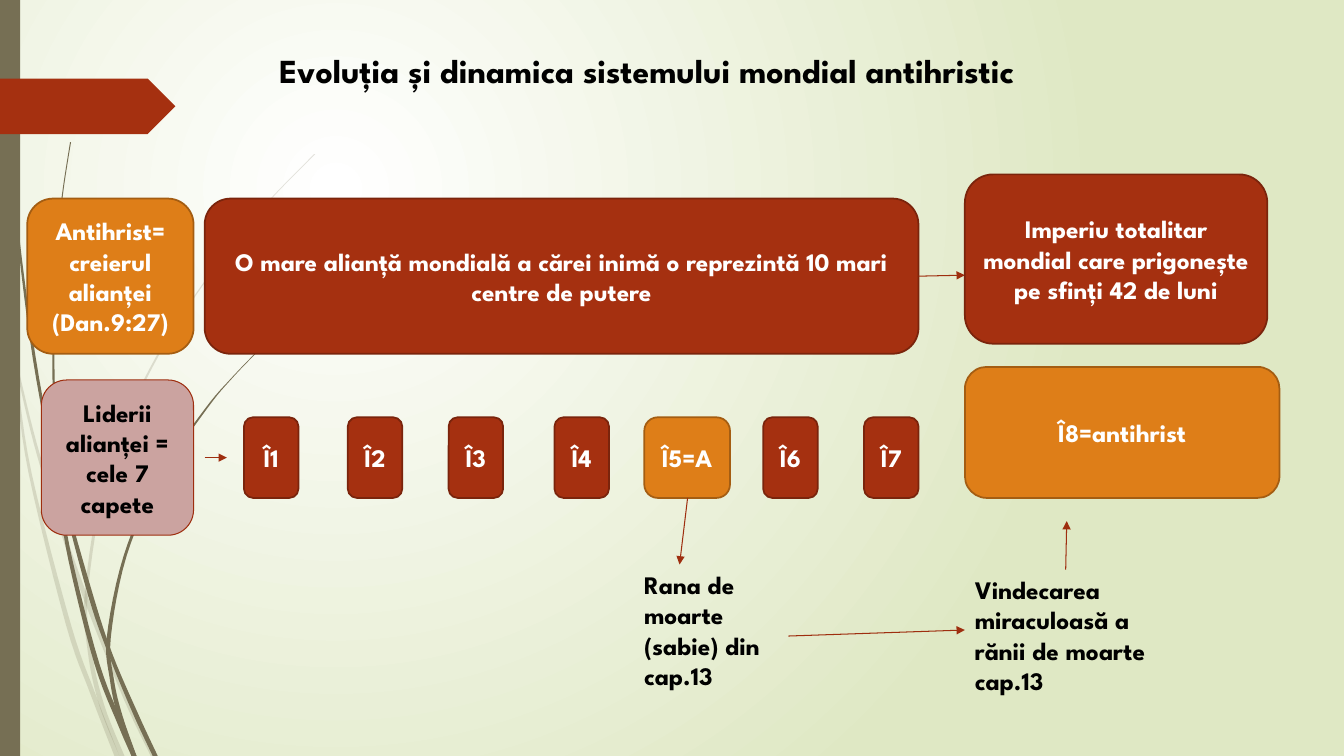
from lxml import etree
from pptx import Presentation
from pptx.dml.color import RGBColor
from pptx.enum.shapes import MSO_CONNECTOR, MSO_SHAPE
from pptx.enum.text import MSO_ANCHOR, MSO_AUTO_SIZE, PP_ALIGN
from pptx.oxml.ns import qn
from pptx.util import Inches, Pt

FONT = "League Spartan"
COLORS = {
    "white": "FFFFFF", "black": "000000", "pale": "DFE8C4", "olive": "766F54",
    "red": "A53010", "red_edge": "7A240C", "orange": "DE7E18",
    "orange_edge": "A45D12", "pink": "CBA3A0", "arrow": "9E2E0F",
}
RED = ("red", "red_edge", 1.25, "white")
ORANGE = ("orange", "orange_edge", 1.25, "white")
PINK = ("pink", "arrow", 0.75, "black")

LIGHT_STEMS = [
    [(0, 2.9, 0.02), (0.05, 3.2, 0.07), (0.11, 3.5, 0.01), (0.16, 3.76, 0.02),
     (0.3, 4.7, 0.03), (0.68, 6.2, 0.05), (0.92, 6.88, 0.05), (1.16, 7.5, 0.05)],
    [(0.14, 3.45, 0.01), (0.16, 3.6, 0.02), (0.35, 4.4, 0.03), (0.6, 5.21, 0.04),
     (0.85, 5.93, 0.05), (1.25, 6.93, 0.05), (1.52, 7.5, 0.05)],
    [(3.12, 1.53, 0.01), (2.68, 1.98, 0.01), (2.28, 2.45, 0.01), (1.59, 3.48, 0.02),
     (1.08, 4.62, 0.03), (0.86, 5.84, 0.03), (0.89, 6.46, 0.04),
     (1.01, 7, 0.05), (1.21, 7.5, 0.05)],
]
DARK_STEMS = [
    [(0.03, 0, 0.01), (0.07, 1.1, 0.01), (0.18, 2.33, 0.02), (0.34, 3.55, 0.03),
     (0.57, 4.81, 0.03), (0.7, 5.56, 0.04), (0.96, 6.58, 0.05), (1.2, 7.2, 0.05),
     (1.33, 7.5, 0.05)],
    [(0.7, 1.41, 0.01), (0.62, 1.93, 0.01), (0.57, 2.45, 0.02), (0.53, 3.49, 0.02),
     (0.56, 4.51, 0.03), (0.62, 4.88, 0.03), (0.9, 5.91, 0.05), (1.1, 6.5, 0.04),
     (1.34, 7.07, 0.05), (1.54, 7.5, 0.05)],
    [(2.6, 3.44, 0.01), (2.31, 3.74, 0.01), (2.04, 4.06, 0.02), (1.57, 4.75, 0.03),
     (1.24, 5.52, 0.03), (1.08, 6.32, 0.04), (1.11, 6.74, 0.04), (1.19, 7.1, 0.05),
     (1.33, 7.5, 0.05)],
]


def rgb(name):
    return RGBColor.from_string(COLORS[name])


def place(shape, left, top, width, height):
    shape.left, shape.top = Inches(left), Inches(top)
    shape.width, shape.height = Inches(width), Inches(height)


def write_text(shape, text, size, color, align=PP_ALIGN.LEFT, anchor=MSO_ANCHOR.TOP):
    frame = shape.text_frame
    frame.text = text
    frame.word_wrap = True
    frame.auto_size = MSO_AUTO_SIZE.NONE
    frame.vertical_anchor = anchor
    for para in frame.paragraphs:
        para.alignment = align
        for span in para.runs:
            span.font.name = FONT
            span.font.size = Pt(size)
            span.font.bold = True
            span.font.color.rgb = rgb(color)


def paint_background(page):
    fill = page.background.fill
    fill.gradient()
    for stop, name in zip(fill.gradient_stops, ("white", "pale")):
        stop.color.rgb = rgb(name)
    gradient = page.element.find(".//" + qn("a:gradFill"))
    gradient.remove(gradient.find(qn("a:lin")))
    circle = etree.SubElement(gradient, qn("a:path"), path="circle")
    etree.SubElement(circle, qn("a:fillToRect"), l="50000", t="50000",
                     r="100000", b="100000")


def add_plain(page, kind, color, left, top, width, height):
    shape = page.shapes.add_shape(kind, 0, 0, 0, 0)
    place(shape, left, top, width, height)
    shape.shadow.inherit = False
    shape.fill.solid()
    shape.fill.fore_color.rgb = rgb(color)
    shape.line.fill.background()
    return shape


def smooth(points, steps=6):
    padded = [points[0], *points, points[-1]]
    curve = []
    for before, start, end, after in zip(padded, padded[1:], padded[2:], padded[3:]):
        for step in range(steps):
            t = step / steps
            curve.append([
                b + (c - a) * t / 2 + (2 * a - 5 * b + 4 * c - d) * t ** 2 / 2
                + (3 * b - a - 3 * c + d) * t ** 3 / 2
                for a, b, c, d in zip(before, start, end, after)])
    return curve + [points[-1]]


def add_stem(page, points, opacity):
    curve = smooth(points)
    outline = [(x - w / 2, y) for x, y, w in curve]
    outline += [(x + w / 2, y) for x, y, w in reversed(curve)]
    outline = [(Inches(max(x, 0)), Inches(y)) for x, y in outline]
    builder = page.shapes.build_freeform(*outline[0])
    builder.add_line_segments(outline[1:], close=True)
    stem = builder.convert_to_shape()
    stem.shadow.inherit = False
    stem.fill.solid()
    stem.fill.fore_color.rgb = rgb("olive")
    stem.line.fill.background()
    color = stem.fill._xPr.find(".//" + qn("a:srgbClr"))
    etree.SubElement(color, qn("a:alpha"), val=str(opacity * 1000))


def add_box(page, text, style, *bounds):
    fill, edge, weight, ink = style
    box = add_plain(page, MSO_SHAPE.ROUNDED_RECTANGLE, fill, *bounds)
    box.line.color.rgb = rgb(edge)
    box.line.width = Pt(weight)
    write_text(box, text, 18, ink, PP_ALIGN.CENTER, MSO_ANCHOR.MIDDLE)


def add_caption(page, text, *bounds):
    box = page.shapes.add_textbox(0, 0, 0, 0)
    place(box, *bounds)
    write_text(box, text, 18, "black")


def add_arrow(page, *ends):
    arrow = page.shapes.add_connector(MSO_CONNECTOR.STRAIGHT, *map(Inches, ends))
    arrow.line.color.rgb = rgb("arrow")
    arrow.line.width = Pt(0.75)
    etree.SubElement(arrow.line._get_or_add_ln(), qn("a:tailEnd"), type="triangle")
    etree.SubElement(arrow._element.spPr, qn("a:effectLst"))


def add_title(page, text):
    title = page.shapes.title
    place(title, 2.59, 0.44, 8.37, 0.5)
    write_text(title, text, 24, "black")
    title.text_frame.margin_left = Inches(0.18)


def main():
    deck = Presentation()
    deck.slide_width, deck.slide_height = Inches(13.33), Inches(7.5)
    page = deck.slides.add_slide(deck.slide_layouts[5])
    paint_background(page)
    for stems, opacity in ((LIGHT_STEMS, 20), (DARK_STEMS, 100)):
        for points in stems:
            add_stem(page, points, opacity)
    add_plain(page, MSO_SHAPE.RECTANGLE, "olive", 0, 0, 0.2, 7.5)
    add_plain(page, MSO_SHAPE.PENTAGON, "red", 0, 0.78, 1.74, 0.55)
    add_title(page, "Evoluția și dinamica sistemului mondial antihristic")

    add_box(page, "O mare alianță mondială a cărei inimă o reprezintă 10 mari centre de putere",
            RED, 2.03, 1.97, 7.08, 1.54)
    add_box(page, "Antihrist= creierul alianței\n(Dan.9:27)", ORANGE, 0.27, 1.97, 1.65, 1.54)
    add_box(page, "Liderii alianței = cele 7 capete", PINK, 0.41, 3.77, 1.51, 1.54)
    for number, left in enumerate((2.42, 3.45, 4.45, 5.5, 6.39, 7.57, 8.57), 1):
        wounded = number == 5
        add_box(page, f"Î{number}=A" if wounded else f"Î{number}",
                ORANGE if wounded else RED, left, 4.14, 0.85 if wounded else 0.54, 0.8)
    add_box(page, "Î8=antihrist", ORANGE, 9.57, 3.64, 3.12, 1.3)
    add_caption(page, "Rana de moarte (sabie) din cap.13", 6.29, 5.6, 1.54, 1.31)
    add_caption(page, "Vindecarea miraculoasă a rănii de moarte cap.13", 9.57, 5.65, 2.01, 1.31)
    for ends in ((6.82, 4.94, 6.74, 5.6), (7.82, 6.31, 9.57, 6.25),
                 (10.57, 5.65, 10.58, 5.17), (9.11, 2.74, 9.57, 2.73),
                 (2.03, 4.54, 2.25, 4.54)):
        add_arrow(page, *ends)
    add_box(page, "Imperiu totalitar mondial care prigonește pe sfinți 42 de luni",
            RED, 9.57, 1.73, 3, 1.68)
    deck.save("out.pptx")


if __name__ == "__main__":
    main()
